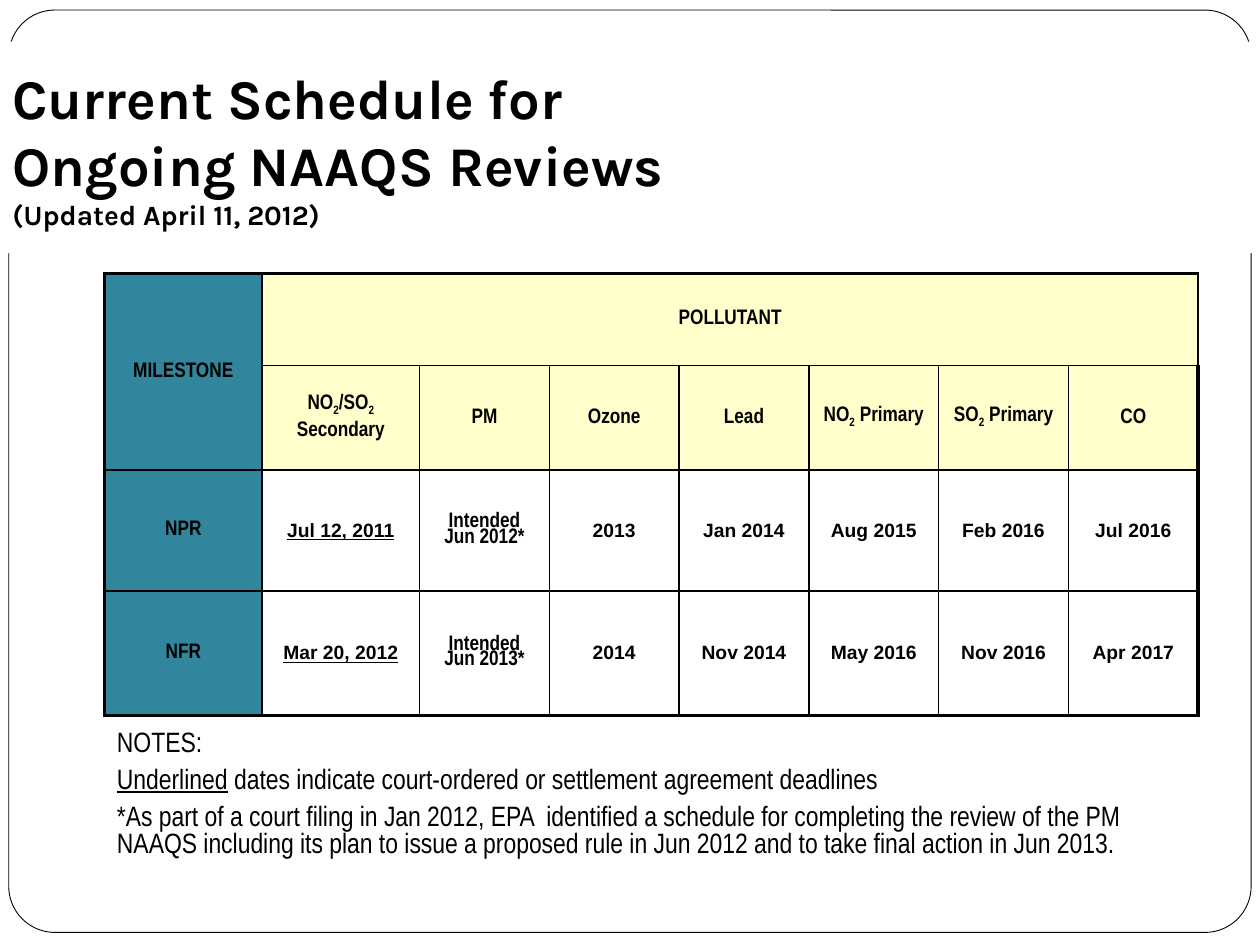
from lxml import etree
from pptx import Presentation, util as u
from pptx.dml.color import RGBColor
from pptx.enum import shapes, text
from pptx.oxml.ns import qn

BLACK = RGBColor(0, 0, 0)
WHITE = RGBColor(255, 255, 255)
TEAL = RGBColor(0x31, 0x85, 0x9C)
CREAM = RGBColor(0xFF, 0xFF, 0xCC)

LABEL = dict(name="Arial Narrow", size=u.Pt(12), bold=True)
DATE = dict(name="Arial", size=u.Pt(11), bold=True)
COURT_DATE = dict(DATE, underline=True)
NOTE = dict(name="Arial Narrow", size=u.Pt(16))
TITLE = dict(name="Karla", size=u.Pt(32), bold=True)
CENTRED = dict(alignment=text.PP_ALIGN.CENTER, space_before=u.Pt(2.4))
TIGHT = dict(alignment=text.PP_ALIGN.CENTER, line_spacing=0.8)


class SlideBuilder:
    def __init__(self, slide):
        self.s = slide

    def run(self, p, words, font):
        """Add a run; the character after each underscore is a subscript."""
        first, *rest = words.split("_")
        parts = [(first, False)]
        for part in rest:
            parts += [(part[0], True), (part[1:], False)]
        for part, low in parts:
            if not part:
                continue
            r = p.add_run()
            r.text = part
            r.font.color.rgb = BLACK
            for key, value in font.items():
                setattr(r.font, key, value)
            if low:
                r._r.get_or_add_rPr().set("baseline", "-25000")

    def paragraphs(self, tf, lines, layout):
        """Each line is a list of (words, font) pairs."""
        for i, line in enumerate(lines):
            p = tf.paragraphs[0] if i == 0 else tf.add_paragraph()
            for key, value in layout.items():
                setattr(p, key, value)
            for words, font in line:
                self.run(p, words, font)

    def box(self, kind, at, line=None):
        sp = self.s.shapes.add_shape(kind, *map(u.Inches, at))
        sp.shadow.inherit = False
        sp.fill.solid()
        sp.fill.fore_color.rgb = WHITE
        if line:
            sp.line.color.rgb = BLACK
            sp.line.width = u.Pt(line)
        else:
            sp.line.fill.background()
        return sp

    def textbox(self, at, lines, layout):
        tf = self.s.shapes.add_textbox(*map(u.Inches, at)).text_frame
        tf.word_wrap = True
        self.paragraphs(tf, lines, layout)

    def table(self, at, cols, rows):
        frame = self.s.shapes.add_table(len(rows), len(cols), *map(u.Inches, at))
        tbl = frame.table
        tbl.first_row = tbl.horz_banding = False
        for col, width in zip(tbl.columns, cols):
            col.width = u.Inches(width)
        for row, height in zip(tbl.rows, rows):
            row.height = u.Inches(height)
        last_row, last_col = len(rows) - 1, len(cols) - 1
        for i in range(len(rows)):
            for j in range(len(cols)):
                cell = tbl.cell(i, j)
                edges = dict(L=j == 0, R=j == last_col, T=i == 0, B=i == last_row)
                self.borders(cell, edges)
                cell.fill.solid()
                cell.fill.fore_color.rgb = TEAL if j == 0 else CREAM if i < 2 else WHITE
                cell.vertical_anchor = text.MSO_ANCHOR.MIDDLE
        return tbl

    def borders(self, cell, edges):
        """Outer edges are thick, inner ones thin."""
        tcPr = cell._tc.get_or_add_tcPr()
        for side, outer in edges.items():
            width = u.Pt(2.25 if outer else 1)
            ln = etree.SubElement(tcPr, qn("a:ln" + side), w=str(width))
            fill = etree.SubElement(ln, qn("a:solidFill"))
            etree.SubElement(fill, qn("a:srgbClr"), val=str(BLACK))

    def cell(self, tbl, i, j, words, font=LABEL, layout=CENTRED):
        lines = [[(line, font)] for line in words.split("\n")]
        self.paragraphs(tbl.cell(i, j).text_frame, lines, layout)


def main():
    prs = Presentation()
    prs.slide_width, prs.slide_height = u.Inches(10), u.Inches(7.5)
    b = SlideBuilder(prs.slides.add_slide(prs.slide_layouts[6]))

    # Rounded frame
    frame = b.box(shapes.MSO_SHAPE.ROUNDED_RECTANGLE, (0.07, 0.08, 9.86, 7.32), line=0.5)
    frame.adjustments[0] = 0.05

    # Title band, covering part of the frame
    tf = b.box(shapes.MSO_SHAPE.RECTANGLE, (0, 0.33, 10, 1.68)).text_frame
    tf.word_wrap = True
    tf.vertical_anchor = text.MSO_ANCHOR.MIDDLE
    title = [
        [("Current Schedule for", TITLE)],
        [("Ongoing NAAQS Reviews", TITLE)],
        [("(Updated April 11, 2012)", dict(TITLE, size=u.Pt(16)))],
    ]
    b.paragraphs(tf, title, dict(alignment=text.PP_ALIGN.LEFT))

    # Schedule table
    tbl = b.table((0.83, 2.17, 8.67, 3.5), [1.25] * 2 + [1.03] * 6, [0.73, 0.83, 0.96, 0.99])
    tbl.cell(0, 0).merge(tbl.cell(1, 0))
    tbl.cell(0, 1).merge(tbl.cell(0, 7))
    b.cell(tbl, 0, 0, "MILESTONE")
    b.cell(tbl, 0, 1, "POLLUTANT")
    pollutants = ["NO_2/SO_2\nSecondary", "PM", "Ozone", "Lead",
                  "NO_2 Primary", "SO_2 Primary", "CO"]
    for j, name in enumerate(pollutants, 1):
        b.cell(tbl, 1, j, name)
    milestones = [
        ("NPR", "Jul 12, 2011", "Intended\nJun 2012*", "2013",
         "Jan 2014", "Aug 2015", "Feb 2016", "Jul 2016"),
        ("NFR", "Mar 20, 2012", "Intended\nJun 2013*", "2014",
         "Nov 2014", "May 2016", "Nov 2016", "Apr 2017"),
    ]
    for i, (name, court, intended, *dates) in enumerate(milestones, 2):
        b.cell(tbl, i, 0, name)
        b.cell(tbl, i, 1, court, COURT_DATE)
        b.cell(tbl, i, 2, intended, LABEL, TIGHT)
        for j, date in enumerate(dates, 3):
            b.cell(tbl, i, j, date, DATE)

    # Notes
    notes = [
        [("NOTES:", NOTE)],
        [("Underlined", dict(NOTE, underline=True)),
         (" dates indicate court-ordered or settlement agreement deadlines", NOTE)],
        [("*As part of a court filing in Jan 2012, EPA  identified a schedule for "
          "completing the review of the PM NAAQS including its plan to issue a "
          "proposed rule in Jun 2012 and to take final action in Jun 2013.", NOTE)],
    ]
    b.textbox((0.83, 5.75, 8.42, 1.13), notes, dict(line_spacing=0.8, space_after=u.Pt(6)))

    prs.save("out.pptx")


if __name__ == "__main__":
    main()
